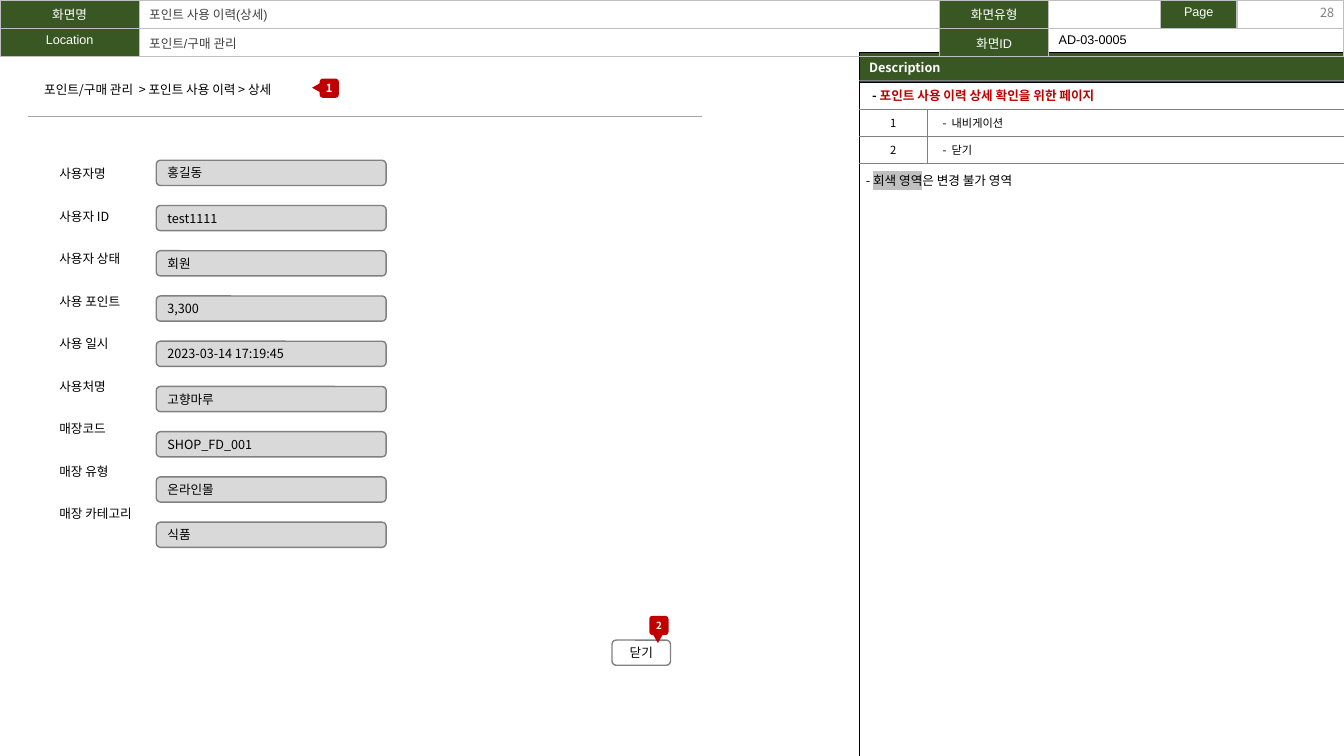
from lxml.etree import SubElement
from pptx import Presentation
from pptx.dml.color import RGBColor
from pptx.enum.shapes import MSO_CONNECTOR, MSO_SHAPE
from pptx.enum.text import MSO_ANCHOR, PP_ALIGN
from pptx.oxml import parse_xml
from pptx.oxml.ns import nsdecls, qn
from pptx.util import Inches, Pt

GREEN = RGBColor(0x38, 0x57, 0x23)
RED = RGBColor(0xC0, 0x00, 0x00)
BLACK = RGBColor(0, 0, 0)
WHITE = RGBColor(0xFF, 0xFF, 0xFF)
DARK = RGBColor(0x40, 0x40, 0x40)
GRAY = RGBColor(0x80, 0x80, 0x80)
RULE = RGBColor(0xA5, 0xA5, 0xA5)
SILVER = RGBColor(0xBF, 0xBF, 0xBF)
FIELD = RGBColor(0xD9, 0xD9, 0xD9)
MARK = RGBColor(0xC0, 0xC0, 0xC0)
NOTO = "Noto Sans CJK KR"
NO_STYLE = "{2D5ABB26-0587-4C30-8999-92F81FD0307C}"
CENTER, RIGHT = PP_ALIGN.CENTER, PP_ALIGN.RIGHT

HEADER = [
    ["화면명", "포인트 사용 이력(상세)", "화면유형", "", "Page", ""],
    ["Location", "포인트/구매 관리", "화면ID", "AD-03-0005", "", ""],
]
HEADER_COLS = [1.38, 7.94, 1.08, 1.11, 0.76, 1.06]
HEADER_LABELS = {"화면명", "화면유형", "Page", "Location", "화면ID"}
PAGE_NO = "28"
BREADCRUMB = "포인트/구매 관리  > 포인트 사용 이력 > 상세"
FIELDS = [
    ("사용자명", "홍길동"),
    ("사용자 ID", "test1111"),
    ("사용자 상태", "회원"),
    ("사용 포인트", "3,300"),
    ("사용 일시", "2023-03-14 17:19:45"),
    ("사용처명", "고향마루"),
    ("매장코드", "SHOP_FD_001"),
    ("매장 유형", "온라인몰"),
    ("매장 카테고리", "식품"),
]
PURPOSE = "포인트 사용 이력 상세 확인을 위한 페이지"
NOTES = [("1", "-  내비게이션"), ("2", "-  닫기")]
FOOTNOTE = [("- ", {}), ("회색 영역", {"mark": MARK}), ("은 변경 불가 영역", {})]

FIRST_FIELD, LAST_FIELD = 1.59, 5.18
FIELD_PITCH = (LAST_FIELD - FIRST_FIELD) / (len(FIELDS) - 1)
PANEL_X, PANEL_W = 8.52, 4.81

prs = Presentation()
prs.slide_width, prs.slide_height = Inches(13.33), Inches(7.5)
slide = prs.slides.add_slide(prs.slide_layouts[6])


def add_run(p, text, size=9, color=BLACK, bold=False, font=NOTO, mark=None):
    r = p.add_run()
    r.text = text
    for name, value in {"size": Pt(size), "bold": bold, "name": font}.items():
        setattr(r.font, name, value)
    r.font.color.rgb = color
    latin = r._r.rPr.find(qn("a:latin"))
    if mark is not None:
        latin.addprevious(parse_xml(
            f'<a:highlight {nsdecls("a")}><a:srgbClr val="{mark}"/></a:highlight>'))
    latin.addnext(parse_xml(f'<a:ea {nsdecls("a")} typeface="{NOTO}"/>'))


def add_text(x, y, w, h, runs, align=None, **frame):
    tf = slide.shapes.add_textbox(*map(Inches, (x, y, w, h))).text_frame
    tf.word_wrap = True
    for name, value in frame.items():
        setattr(tf, name, value)
    p = tf.paragraphs[0]
    p.alignment = align
    for text, style in runs:
        add_run(p, text, **style)
    return tf


def add_box(kind, x, y, w, h, fill, line=None, text="", align=None, inset=None, **style):
    sp = slide.shapes.add_shape(kind, *map(Inches, (x, y, w, h)))
    sp.shadow.inherit = False
    sp.fill.solid()
    sp.fill.fore_color.rgb = fill
    if line is None:
        sp.line.fill.background()
    else:
        sp.line.color.rgb, sp.line.width = line, Pt(1)
    if text:
        tf = sp.text_frame
        tf.vertical_anchor = MSO_ANCHOR.MIDDLE
        if inset is not None:
            for side in ("left", "right", "top", "bottom"):
                setattr(tf, f"margin_{side}", Inches(inset))
        p = tf.paragraphs[0]
        p.alignment = align or PP_ALIGN.LEFT
        add_run(p, text, **style)
    return sp


def add_table(x, y, cols, rows):
    frame = slide.shapes.add_table(len(rows), len(cols), *map(Inches, (x, y, sum(cols), sum(rows))))
    table = frame.table
    table.first_row = table.horz_banding = False
    table._tbl.tblPr.find(qn("a:tableStyleId")).text = NO_STYLE
    for col, width in zip(table.columns, cols):
        col.width = Inches(width)
    for row, height in zip(table.rows, rows):
        row.height = Inches(height)
    return table


def fill_cell(cell, text, sides, edge, weight, fill=None, align=None, **style):
    """Write one cell; sides is a string of L, R, T, B for the borders drawn."""
    if fill is None:
        cell.fill.background()
    else:
        cell.fill.solid()
        cell.fill.fore_color.rgb = fill
    for i, side in enumerate(s for s in "LRTB" if s in sides):
        cell._tc.get_or_add_tcPr().insert(i, parse_xml(
            f'<a:ln{side} {nsdecls("a")} w="{Pt(weight)}"><a:solidFill>'
            f'<a:srgbClr val="{edge}"/></a:solidFill></a:ln{side}>'))
    p = cell.text_frame.paragraphs[0]
    p.alignment = align
    if text:
        add_run(p, text, **style)
    else:
        SubElement(p._p, qn("a:endParaRPr")).set("sz", "900")


def add_panel():
    panel = add_table(PANEL_X, 0.52, [PANEL_W], [0.3, 6.68])
    fill_cell(panel.cell(0, 0), "Description", "LRTB", BLACK, 0.5, GREEN, color=WHITE, bold=True)
    fill_cell(panel.cell(1, 0), "", "LRTB", BLACK, 0.5)

    notes = add_table(PANEL_X, 0.8, [0.68, 4.13], [0.27] * 3)
    notes.cell(0, 0).merge(notes.cell(0, 1))
    for r, row in enumerate([("- ", "")] + NOTES):
        for c, text in enumerate(row):
            cell = notes.cell(r, c)
            cell.vertical_anchor = MSO_ANCHOR.MIDDLE
            fill_cell(cell, text, "LTB" if r and c else "TB", GRAY, 0.75,
                      align=CENTER if r and not c else None,
                      size=8 if r else 9, bold=not r)
            if r and c:
                cell.margin_left = Inches(0.15)
    title = notes.cell(0, 0)
    title.margin_left = Inches(0.13)
    add_run(title.text_frame.paragraphs[0], PURPOSE, color=RED, bold=True)


def add_header():
    table = add_table(0, 0, HEADER_COLS, [0.28, 0.28])
    table.cell(1, 3).merge(table.cell(1, 5))
    for r, row in enumerate(HEADER):
        for c, text in enumerate(row):
            label = text in HEADER_LABELS
            color = WHITE if label else DARK if c == 1 else BLACK
            fill_cell(table.cell(r, c), text, "LRTB", SILVER, 1, GREEN if label else None,
                      CENTER if label else None, color=color, font="Arial")
    add_text(10.33, -0.08, 3, 0.4, [(PAGE_NO, {"color": GRAY})], RIGHT,
             vertical_anchor=MSO_ANCHOR.MIDDLE)


def add_marker(number, x, y, tip_x, tip_y, turn, size):
    tip = add_box(MSO_SHAPE.ISOSCELES_TRIANGLE, tip_x, tip_y, 0.09, 0.08, RED)
    tip.rotation = turn
    add_box(MSO_SHAPE.ROUNDED_RECTANGLE, x, y, 0.19, 0.19, RED, text=number, align=CENTER,
            inset=0, color=WHITE, bold=True, size=size)


def add_form():
    add_text(0.34, 0.76, 3.02, 0.25, [(BREADCRUMB, {})])
    rule = slide.shapes.add_connector(
        MSO_CONNECTOR.STRAIGHT, *map(Inches, (0.28, 1.15, 6.96, 1.15)))
    rule.line.color.rgb, rule.line.width = RULE, Pt(0.5)
    SubElement(rule._element.spPr, qn("a:effectLst"))

    labels = add_text(0.49, 1.55, 1.06, 3.93, [], margin_top=Inches(0.1))
    for i, (label, value) in enumerate(FIELDS):
        p = labels.add_paragraph() if i else labels.paragraphs[0]
        p.space_after = Pt(19.5)
        add_run(p, label)
        add_box(MSO_SHAPE.ROUNDED_RECTANGLE, 1.55, FIRST_FIELD + i * FIELD_PITCH, 2.28, 0.25,
                FIELD, GRAY, value)
    add_box(MSO_SHAPE.ROUNDED_RECTANGLE, 6.07, 6.35, 0.58, 0.25, WHITE, GRAY, "닫기", CENTER)


add_panel()
add_header()
add_form()
add_marker("1", 3.17, 0.78, 3.09, 0.83, 270, 8)
add_marker("2", 6.44, 6.11, 6.48, 6.3, 180, 7)
add_text(8.49, 1.67, 3.68, 0.25, FOOTNOTE)
prs.save("out.pptx")
